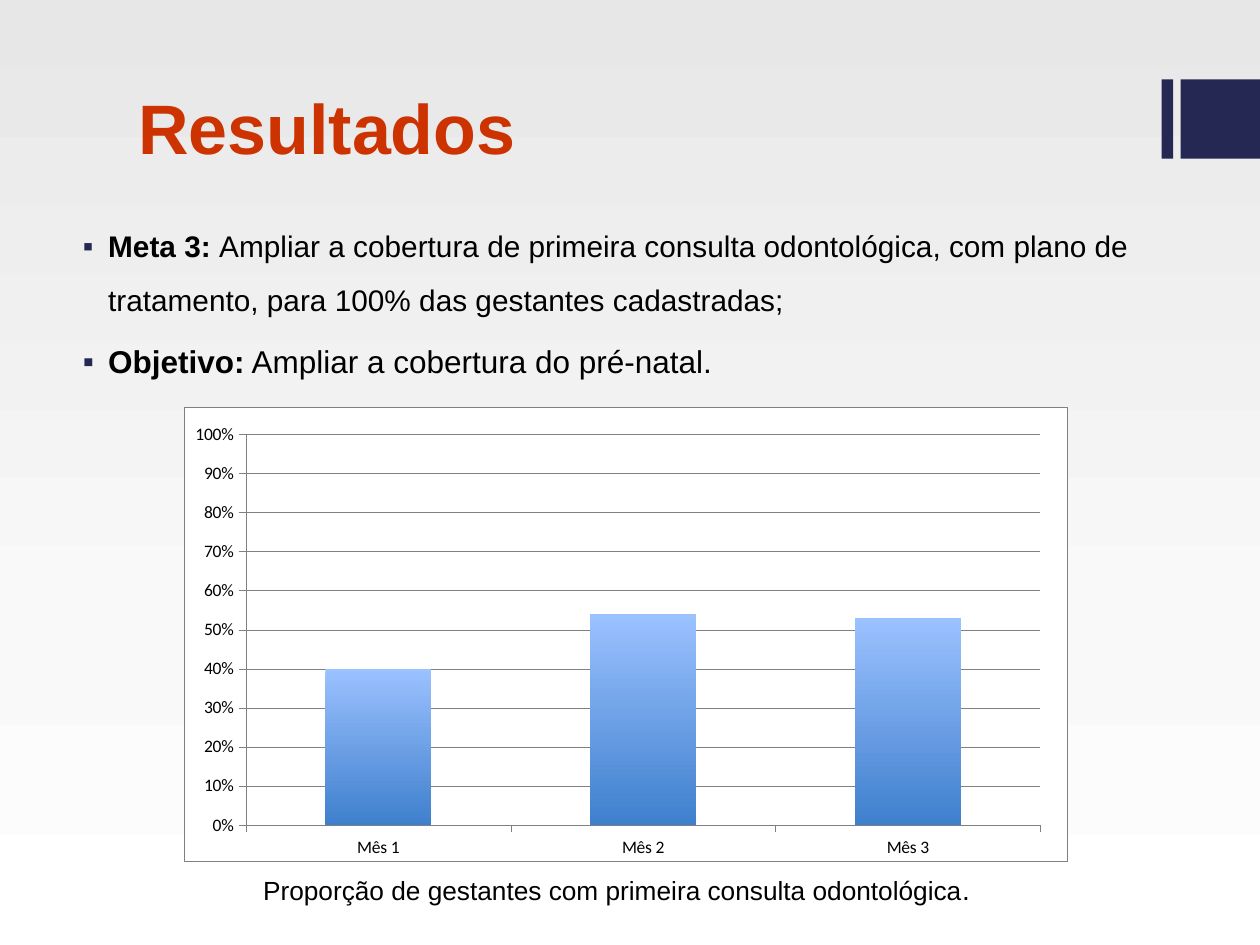
from lxml.etree import SubElement
from pptx import Presentation
from pptx.chart.data import CategoryChartData
from pptx.dml.color import RGBColor
from pptx.enum.chart import XL_CHART_TYPE as ChartType, XL_TICK_MARK as Tick
from pptx.enum.shapes import MSO_SHAPE as Shape
from pptx.enum.text import MSO_ANCHOR as Anchor, PP_ALIGN as Align
from pptx.oxml import parse_xml
from pptx.oxml.ns import nsdecls, qn
from pptx.util import Inches, Pt


def color(value):
    return RGBColor.from_string(value)


def box(left, top, width, height):
    return [Inches(length) for length in (left, top, width, height)]


def set_gradient(fill, owner, stops):
    fill.gradient()
    fill.gradient_angle = 270
    stop_list = owner.find(".//" + qn("a:gsLst"))
    for old_stop in list(stop_list):
        stop_list.remove(old_stop)
    for position, value in stops:
        stop = SubElement(stop_list, qn("a:gs"), pos=str(position * 1000))
        SubElement(stop, qn("a:srgbClr"), val=value)


class Deck:
    font = "Arial"
    chart_font = "Calibri"
    navy = "242852"
    red = "CC3300"
    black = "000000"
    white = "FFFFFF"
    gray = "808080"

    def __init__(self):
        self.presentation = Presentation()
        self.presentation.slide_width = Inches(10)
        self.presentation.slide_height = Inches(7.5)
        self.slide = self.presentation.slides.add_slide(self.presentation.slide_layouts[6])

    def background(self, stops):
        set_gradient(self.slide.background.fill, self.slide.element, stops)

    def bar(self, *place):
        bar = self.slide.shapes.add_shape(Shape.RECTANGLE, *box(*place))
        bar.shadow.inherit = False
        bar.fill.solid()
        bar.fill.fore_color.rgb = color(self.navy)
        bar.line.fill.background()

    def text(self, place, paragraphs, ink=black, anchor=Anchor.TOP, bullets=False):
        frame = self.slide.shapes.add_textbox(*box(*place)).text_frame
        frame.word_wrap = True
        frame.vertical_anchor = anchor
        for index, pieces in enumerate(paragraphs):
            paragraph = frame.add_paragraph() if index else frame.paragraphs[0]
            for words, size, bold in pieces:
                run = paragraph.add_run()
                run.text = words
                run.font.name = self.font
                run.font.size = Pt(size)
                run.font.bold = bold
                run.font.color.rgb = color(ink)
            if bullets:
                self.bullet(paragraph)

    def bullet(self, paragraph):
        paragraph.alignment = Align.JUSTIFY
        paragraph.line_spacing = 1.5
        paragraph.space_before = Pt(3.5)
        properties = paragraph._p.get_or_add_pPr()
        properties.set("marL", str(Inches(0.25)))
        properties.set("indent", str(Inches(-0.2)))
        tint = SubElement(properties, qn("a:buClr"))
        SubElement(tint, qn("a:srgbClr"), val=self.navy)
        SubElement(properties, qn("a:buFont"), typeface=self.font)
        SubElement(properties, qn("a:buChar"), char="▪")

    def thin(self, line):
        line.color.rgb = color(self.gray)
        line.width = Pt(0.25)

    def panel(self, outline):
        return parse_xml(
            f'<c:spPr {nsdecls("c", "a")}><a:solidFill><a:srgbClr val="{self.white}"/></a:solidFill>'
            f'<a:ln w="{Pt(0.25)}">{outline}</a:ln></c:spPr>')

    def column_chart(self, place, categories, name, values, stops, plot):
        data = CategoryChartData(number_format="0%")
        data.categories = categories
        data.add_series(name, values)
        chart = self.slide.shapes.add_chart(ChartType.COLUMN_CLUSTERED, *box(*place), data).chart
        chart.has_legend = False
        chart.has_title = False
        chart.font.name = self.chart_font
        chart.font.size = Pt(10)
        chart.font.color.rgb = color(self.black)

        for axis in (chart.category_axis, chart.value_axis):
            axis.major_tick_mark = Tick.OUTSIDE
            axis.minor_tick_mark = Tick.NONE
            self.thin(axis.format.line)
        scale = chart.value_axis
        scale.minimum_scale, scale.maximum_scale, scale.major_unit = 0, 1, 0.1
        scale.tick_labels.number_format = "0%"
        scale.tick_labels.number_format_is_linked = False
        scale.has_major_gridlines = True
        self.thin(scale.major_gridlines.format.line)

        columns = chart.plots[0]
        columns.gap_width = 150
        columns.vary_by_categories = False
        series = columns.series[0]
        set_gradient(series.format.fill, series._element, stops)

        body = chart._chartSpace.find(qn("c:chart"))
        area = body.find(qn("c:plotArea"))
        for old_layout in area.findall(qn("c:layout")):
            area.remove(old_layout)
        settings = [("layoutTarget", "inner"), ("xMode", "edge"), ("yMode", "edge"),
                    *zip("xywh", plot)]
        layout = parse_xml(f'<c:layout {nsdecls("c")}><c:manualLayout/></c:layout>')
        for tag, value in settings:
            SubElement(layout[0], qn("c:" + tag), val=str(value))
        area.insert(0, layout)
        area.append(self.panel("<a:noFill/>"))
        body.addnext(self.panel(f'<a:solidFill><a:srgbClr val="{self.gray}"/></a:solidFill>'))

    def save(self):
        self.presentation.save("out.pptx")


def main():
    deck = Deck()
    deck.background([(0, "E7E7E7"), (65, "F9F9F9"), (100, "FFFFFF")])
    deck.bar(9.22, 0.63, 0.09, 0.63)
    deck.bar(9.37, 0.63, 0.63, 0.63)
    deck.text((1, 0.13, 8, 1.26), [[("Resultados", 40, True)]], deck.red, Anchor.BOTTOM)
    goal = [("Meta 3: ", 17, True),
            ("Ampliar a cobertura de primeira consulta odontológica, com plano de tratamento, "
             "para 100% das gestantes cadastradas;", 17, False)]
    objective = [("Objetivo:", 18, True), (" Ampliar a cobertura do pré-natal.", 18, False)]
    deck.text((0.51, 1.62, 8.55, 3.87), [goal, objective], bullets=True)
    deck.column_chart((1.46, 3.23, 7.01, 3.61), ["Mês 1", "Mês 2", "Mês 3"], "Series 1",
                      [0.4, 0.54, 0.53], [(0, "9BC1FF"), (100, "3F80CD")],
                      (0.07, 0.06, 0.9, 0.86))
    caption = [("Proporção de gestantes com primeira consulta odontológica", 15, False),
               (".", 16, False)]
    deck.text((1.99, 6.88, 6.46, 0.37), [caption])
    deck.save()


if __name__ == "__main__":
    main()
